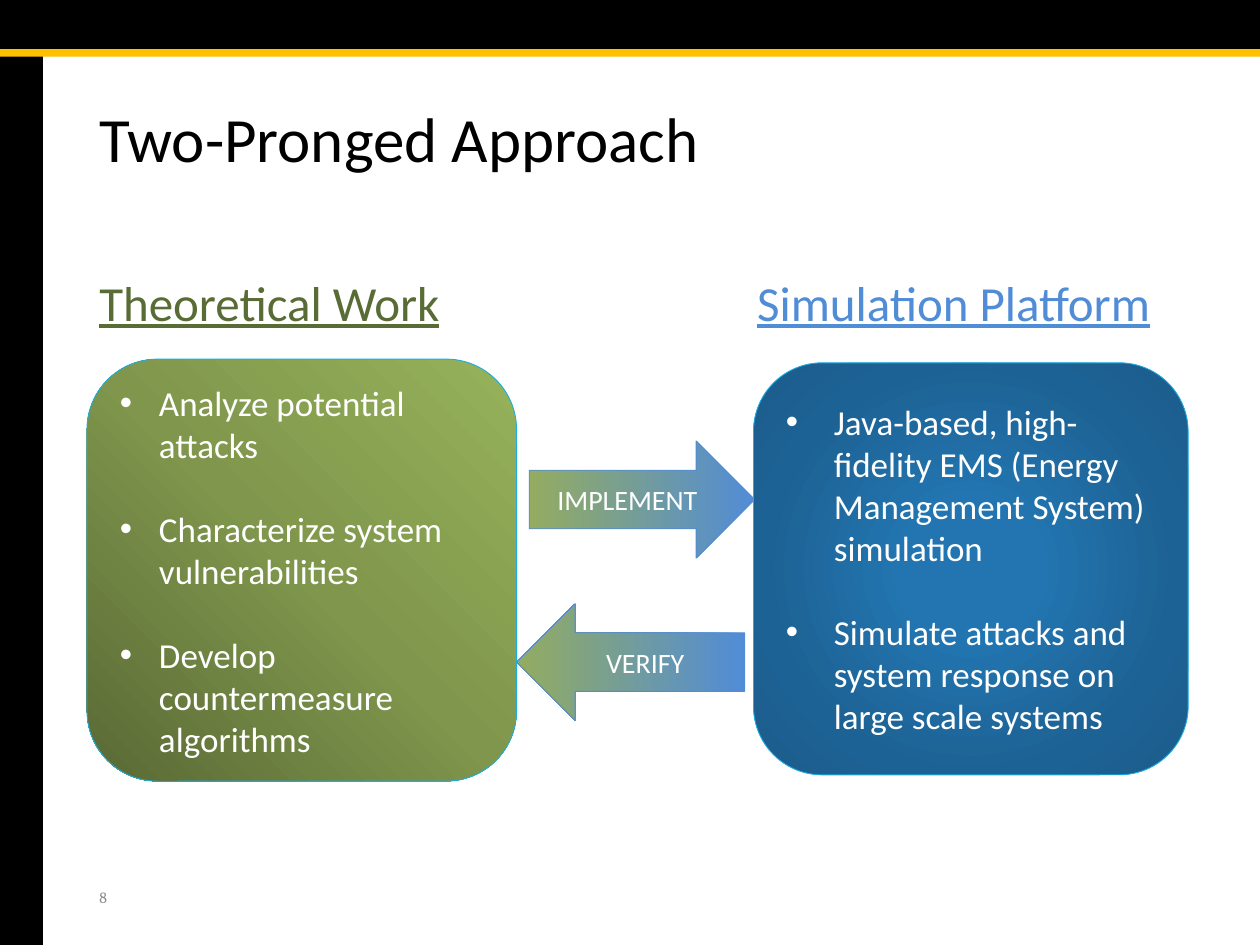
from pptx import Presentation
from pptx.dml.color import RGBColor
from pptx.enum.shapes import MSO_SHAPE as Shape
from pptx.enum.text import MSO_ANCHOR as Anchor, PP_ALIGN as Align
from pptx.oxml import parse_xml
from pptx.oxml.ns import nsdecls, qn
from pptx.util import Inches, Pt

BLACK = RGBColor(0x00, 0x00, 0x00)
WHITE = RGBColor(0xFF, 0xFF, 0xFF)
GOLD = RGBColor(0xFF, 0xC0, 0x00)
GRAY = RGBColor(0x8C, 0x8C, 0x8C)
OLIVE = RGBColor(0x5A, 0x6C, 0x35)
GREEN = RGBColor(0x94, 0xAC, 0x60)
BLUE = RGBColor(0x51, 0x8C, 0xD7)
CYAN = RGBColor(0x1C, 0xAD, 0xE4)
GREEN_STOPS = [(0, RGBColor(0x59, 0x69, 0x35)), (50, RGBColor(0x7F, 0x96, 0x4C)),
               (100, RGBColor(0x96, 0xB2, 0x5A))]
BLUE_STOPS = [(0, RGBColor(0x22, 0x75, 0xB0)), (23, RGBColor(0x22, 0x75, 0xB0)),
              (69, RGBColor(0x1D, 0x62, 0x94)), (97, RGBColor(0x1B, 0x5C, 0x8B))]
ARROW_STOPS = [(0, BLUE), (100, GREEN)]

# Gradient directions
RIGHT_TO_LEFT = '<a:lin ang="10800000" scaled="0"/>'
FROM_BOTTOM_LEFT = '<a:path path="circle"><a:fillToRect t="100000" r="100000"/></a:path>'
FROM_CENTER = ('<a:path path="circle">'
               '<a:fillToRect l="50000" t="50000" r="50000" b="50000"/></a:path>')

# Content: boxes are (left, top, width, height) in inches
BANDS = [((0, 0, 10, 0.4), BLACK), ((0, 0.4, 0.34, 7.1), BLACK), ((0, 0.39, 10, 0.06), GOLD)]
LABELS = [  # text, box, size, font, color, underline, anchor, line spacing
    ("Two-Pronged Approach", (0.69, 0.4, 8.62, 1.45), 36, "Calibri", BLACK, False, Anchor.MIDDLE, 0.9),
    ("8", (0.69, 6.92, 0.54, 0.4), 9, "Cambria", GRAY, False, Anchor.MIDDLE, 1),
    ("Theoretical Work", (0.69, 2.11, 3.75, 0.57), 28, "Calibri", OLIVE, True, Anchor.TOP, 1),
    ("Simulation Platform", (5.91, 2.11, 3.72, 0.57), 28, "Calibri", BLUE, True, Anchor.TOP, 1),
]
ARROWS = [
    ("IMPLEMENT", Shape.RIGHT_ARROW, (4.2, 3.5, 1.79, 0.93)),
    ("VERIFY", Shape.LEFT_ARROW, (4.1, 4.79, 1.81, 0.93)),
]
PRONGS = [  # box, gradient stops, direction, indent, bullets
    ((0.69, 2.85, 3.41, 3.35), GREEN_STOPS, FROM_BOTTOM_LEFT, 0.31,
     ["Analyze potential attacks",
      "Characterize system vulnerabilities",
      "Develop countermeasure algorithms"]),
    ((5.98, 2.88, 3.45, 3.27), BLUE_STOPS, FROM_CENTER, 0.38,
     ["Java-based, high-fidelity EMS (Energy Management System) simulation",
      "Simulate attacks and system response on large scale systems"]),
]

prs = Presentation()
prs.slide_width, prs.slide_height = Inches(10), Inches(7.5)
slide = prs.slides.add_slide(prs.slide_layouts[6])


def add_shape(kind, box):
    shape = slide.shapes.add_shape(kind, *map(Inches, box))
    shape.shadow.inherit = False
    return shape


def add_gradient_shape(kind, box, stops, direction, outline):
    shape = add_shape(kind, box)
    shape.fill.gradient()
    stop_xml = "".join(f'<a:gs pos="{pos * 1000}"><a:srgbClr val="{color}"/></a:gs>'
                       for pos, color in stops)
    gradient = parse_xml(f'<a:gradFill {nsdecls("a")} rotWithShape="1">'
                         f'<a:gsLst>{stop_xml}</a:gsLst>{direction}</a:gradFill>')
    properties = shape.element.spPr
    properties.replace(properties.find(qn("a:gradFill")), gradient)
    shape.line.color.rgb = outline
    shape.line.width = Pt(0.5)
    shape.text_frame.word_wrap = True
    shape.text_frame.vertical_anchor = Anchor.MIDDLE
    return shape


def add_run(paragraph, text, size, color, font="Calibri", underline=False):
    run = paragraph.add_run()
    run.text = text
    run.font.size = Pt(size)
    run.font.name = font
    run.font.color.rgb = color
    if underline:
        run.font.underline = True


# Frame bands
for box, color in BANDS:
    band = add_shape(Shape.RECTANGLE, box)
    band.fill.solid()
    band.fill.fore_color.rgb = color
    band.line.fill.background()

# Title, page number and headings
for text, box, size, font, color, underline, anchor, spacing in LABELS:
    frame = slide.shapes.add_textbox(*map(Inches, box)).text_frame
    frame.word_wrap = True
    frame.vertical_anchor = anchor
    frame.paragraphs[0].line_spacing = spacing
    add_run(frame.paragraphs[0], text, size, color, font, underline)

# Arrows between the prongs
for text, kind, box in ARROWS:
    arrow = add_gradient_shape(kind, box, ARROW_STOPS, RIGHT_TO_LEFT, BLUE)
    caption = arrow.text_frame.paragraphs[0]
    caption.alignment = Align.CENTER
    add_run(caption, text, 16, WHITE)

# Prong boxes with bullets
for box, stops, direction, indent, bullets in PRONGS:
    frame = add_gradient_shape(Shape.ROUNDED_RECTANGLE, box, stops, direction, CYAN).text_frame
    for i, text in enumerate(bullets):
        item = frame.add_paragraph() if i else frame.paragraphs[0]
        item.alignment = Align.LEFT
        if i:
            item.space_before = Pt(24)
        layout = item._p.get_or_add_pPr()
        layout.set("marL", str(Inches(indent)))
        layout.set("indent", str(-Inches(indent)))
        layout.append(parse_xml(f'<a:buFont {nsdecls("a")} typeface="Arial"/>'))
        layout.append(parse_xml(f'<a:buChar {nsdecls("a")} char="•"/>'))
        add_run(item, text, 20, WHITE)

prs.save("out.pptx")
